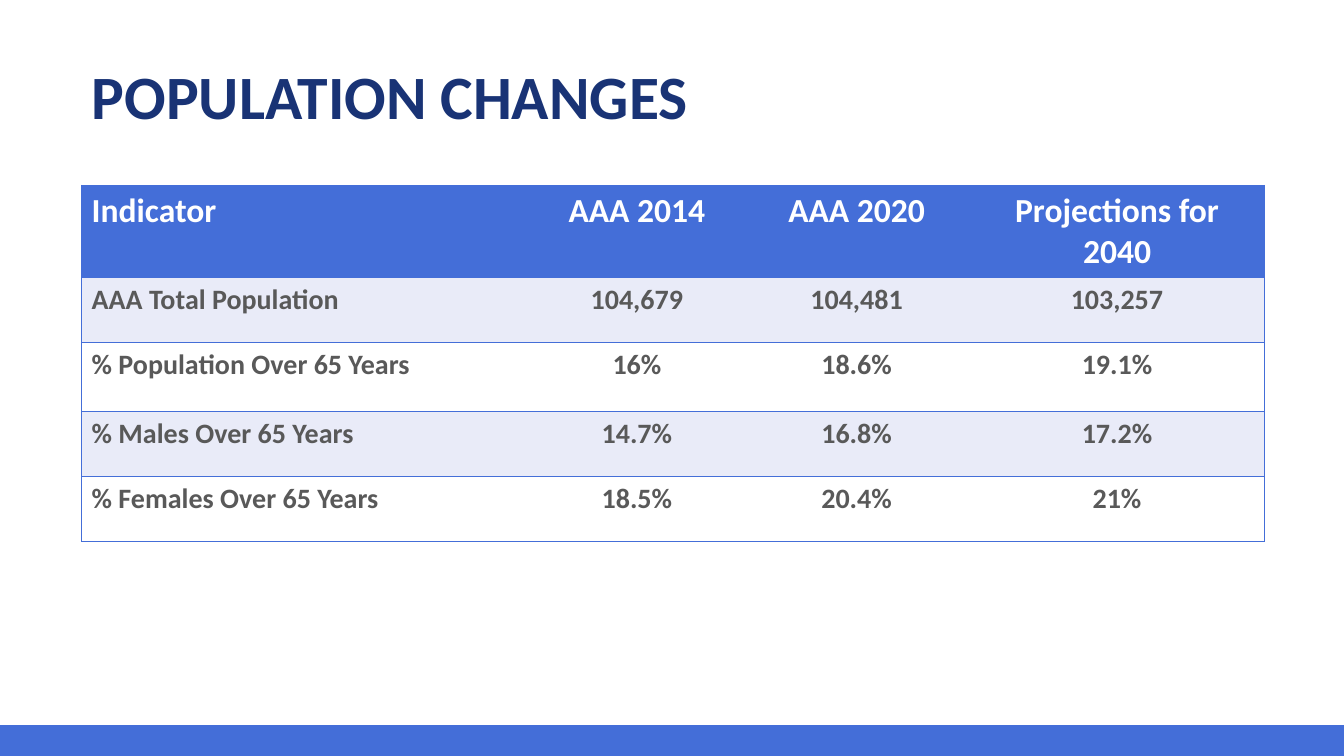
from lxml import etree
from pptx import Presentation
from pptx.dml.color import RGBColor
from pptx.enum.shapes import MSO_SHAPE
from pptx.enum.text import MSO_ANCHOR, PP_ALIGN
from pptx.oxml.ns import qn
from pptx.util import Pt

RECTANGLE = MSO_SHAPE.RECTANGLE
BOTTOM = MSO_ANCHOR.BOTTOM
LEFT, CENTER = PP_ALIGN.LEFT, PP_ALIGN.CENTER
BLUE, NAVY, PALE, WHITE, GREY = "446ED8", "193375", "E9EBF8", "FFFFFF", "595959"


def style_text(paragraph, size, color, alignment=LEFT):
    paragraph.alignment = alignment
    paragraph.font.name = "Calibri"
    paragraph.font.size = Pt(size)
    paragraph.font.bold = True
    paragraph.font.color.rgb = RGBColor.from_string(color)


def add_border(cell, side, visible):
    properties = cell._tc.get_or_add_tcPr()
    line = etree.SubElement(properties, qn(f"a:ln{side}"), w=str(Pt(1)))
    if visible:
        fill = etree.SubElement(line, qn("a:solidFill"))
        etree.SubElement(fill, qn("a:srgbClr"), val=BLUE)
    else:
        etree.SubElement(line, qn("a:noFill"))


presentation = Presentation()
presentation.slide_width, presentation.slide_height = Pt(960), Pt(540)
slide = presentation.slides.add_slide(presentation.slide_layouts[5])

# Footer band
band = slide.shapes.add_shape(RECTANGLE, Pt(0), Pt(518.4), Pt(960), Pt(21.6))
band.shadow.inherit = False
band.fill.solid()
band.fill.fore_color.rgb = RGBColor.from_string(BLUE)
band.line.color.rgb = RGBColor.from_string(BLUE)
band.line.width = Pt(1)

# Title
title = slide.shapes.title
title.left, title.top, title.width, title.height = Pt(58.3), Pt(8.6), Pt(720), Pt(90)
title.text_frame.text = "POPULATION CHANGES"
title.text_frame.vertical_anchor = BOTTOM
title.text_frame.paragraphs[0].line_spacing = 0.9
style_text(title.text_frame.paragraphs[0], 44, NAVY)

# Population table
rows = [
    ("Indicator", "AAA 2014", "AAA 2020", "Projections for 2040"),
    ("AAA Total Population", "104,679", "104,481", "103,257"),
    ("% Population Over 65 Years", "16%", "18.6%", "19.1%"),
    ("% Males Over 65 Years", "14.7%", "16.8%", "17.2%"),
    ("% Females Over 65 Years", "18.5%", "20.4%", "21%"),
]
column_widths = [320.4, 152.6, 161.3, 210.7]
row_heights = [65.7, 46.4, 49.3, 46.4, 46.4]
table = slide.shapes.add_table(
    len(rows), len(column_widths), Pt(58.3), Pt(132.4),
    Pt(sum(column_widths)), Pt(sum(row_heights))).table
for column, width in zip(table.columns, column_widths):
    column.width = Pt(width)
for row, height in zip(table.rows, row_heights):
    row.height = Pt(height)

last_column = len(column_widths) - 1
for row_index, values in enumerate(rows):
    if row_index == 0:
        size, color, background = 24, WHITE, BLUE
    else:
        size, color, background = 20, GREY, PALE if row_index % 2 else WHITE
    for column_index, value in enumerate(values):
        cell = table.cell(row_index, column_index)
        cell.text = value
        style_text(cell.text_frame.paragraphs[0], size, color,
                   CENTER if column_index else LEFT)
        add_border(cell, "L", column_index == 0)
        add_border(cell, "R", column_index == last_column)
        add_border(cell, "T", True)
        add_border(cell, "B", True)
        cell.fill.solid()
        cell.fill.fore_color.rgb = RGBColor.from_string(background)

presentation.save("out.pptx")
